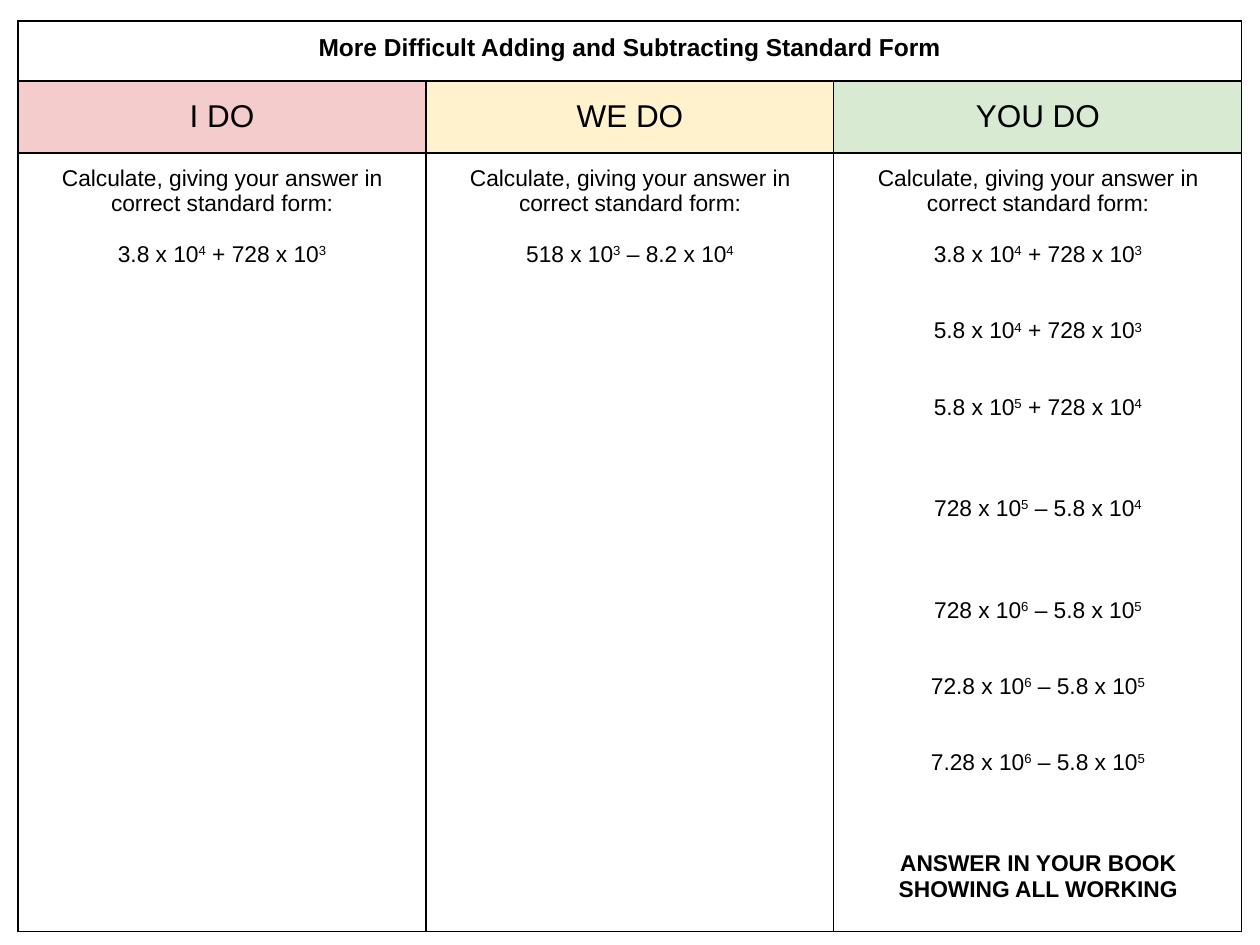
import pptx
import pptx.dml.color
import pptx.enum.text
import pptx.oxml
import pptx.oxml.ns
import pptx.util

PX = 914400 // 126
LINE = 14.5


def px(n):
    return pptx.util.Emu(n * PX)


def color(code):
    return pptx.dml.color.RGBColor.from_string(code)


class Page:
    font = "Arial"
    ink = "000000"
    pad = 13

    def __init__(self, deck):
        self.slide = deck.slides.add_slide(deck.slide_layouts[6])

    def table(self, left, top, cols, rows):
        frame = self.slide.shapes.add_table(
            len(rows), len(cols), px(left), px(top), px(sum(cols)), px(sum(rows)))
        grid = frame.table
        grid.first_row = grid.horz_banding = False
        for col, width in zip(grid.columns, cols):
            col.width = px(width)
        for row, height in zip(grid.rows, rows):
            row.height = px(height)
        for cell in grid.iter_cells():
            self.border(cell)
        return grid

    def border(self, cell):
        cell.fill.background()
        props = cell._tc.get_or_add_tcPr()
        for i, side in enumerate("LRTB"):
            props.insert(i, pptx.oxml.parse_xml(
                f'<a:ln{side} {pptx.oxml.ns.nsdecls("a")} w="9525"><a:solidFill>'
                f'<a:srgbClr val="{self.ink}"/></a:solidFill></a:ln{side}>'))

    def fill(self, cell, lines, size, back=None, bold=False, middle=False):
        cell.margin_left = cell.margin_right = px(self.pad)
        cell.margin_top = cell.margin_bottom = px(self.pad)
        if middle:
            cell.vertical_anchor = pptx.enum.text.MSO_ANCHOR.MIDDLE
        if back:
            cell.fill.solid()
            cell.fill.fore_color.rgb = color(back)
        frame = cell.text_frame
        for i, (text, gap) in enumerate(lines):
            para = frame.add_paragraph() if i else frame.paragraphs[0]
            self.line(para, text, gap, size, bold)

    def line(self, para, text, gap, size, bold):
        para.alignment = pptx.enum.text.PP_ALIGN.CENTER
        para.space_before = pptx.util.Pt(gap * LINE)
        first, *rest = text.split("^")
        para.add_run().text = first
        for part in rest:
            power = para.add_run()
            power.text = part[0]
            power._r.get_or_add_rPr().set("baseline", "30000")
            if part[1:]:
                para.add_run().text = part[1:]
        font = para.font
        font.name = self.font
        font.size = pptx.util.Pt(size)
        font.bold = bold
        font.color.rgb = color(self.ink)


def main():
    deck = pptx.Presentation()
    deck.slide_width, deck.slide_height = px(1260), px(945)
    page = Page(deck)
    grid = page.table(18, 21, [408] * 3, [60, 72, 779])

    title = grid.cell(0, 0)
    title.merge(grid.cell(0, 2))
    page.fill(title, [("More Difficult Adding and Subtracting Standard Form", 0)],
              14, bold=True)

    task = ("Calculate, giving your answer in correct standard form:", 0)
    start = ("3.8 x 10^4 + 728 x 10^3", 1)
    parts = [
        ("I DO", "F4CCCC", [start]),
        ("WE DO", "FFF2CC", [("518 x 10^3 – 8.2 x 10^4", 1)]),
        ("YOU DO", "D9EAD3", [
            start,
            ("5.8 x 10^4 + 728 x 10^3", 2),
            ("5.8 x 10^5 + 728 x 10^4", 2),
            ("728 x 10^5 – 5.8 x 10^4", 3),
            ("728 x 10^6 – 5.8 x 10^5", 3),
            ("72.8 x 10^6 – 5.8 x 10^5", 2),
            ("7.28 x 10^6 – 5.8 x 10^5", 2),
            ("ANSWER IN YOUR BOOK SHOWING ALL WORKING", 3),
        ]),
    ]
    for col, (head, back, sums) in enumerate(parts):
        page.fill(grid.cell(1, col), [(head, 0)], 18, back, middle=True)
        page.fill(grid.cell(2, col), [task] + sums, 13)
    grid.cell(2, 2).text_frame.paragraphs[-1].font.bold = True

    deck.save("out.pptx")


if __name__ == "__main__":
    main()
